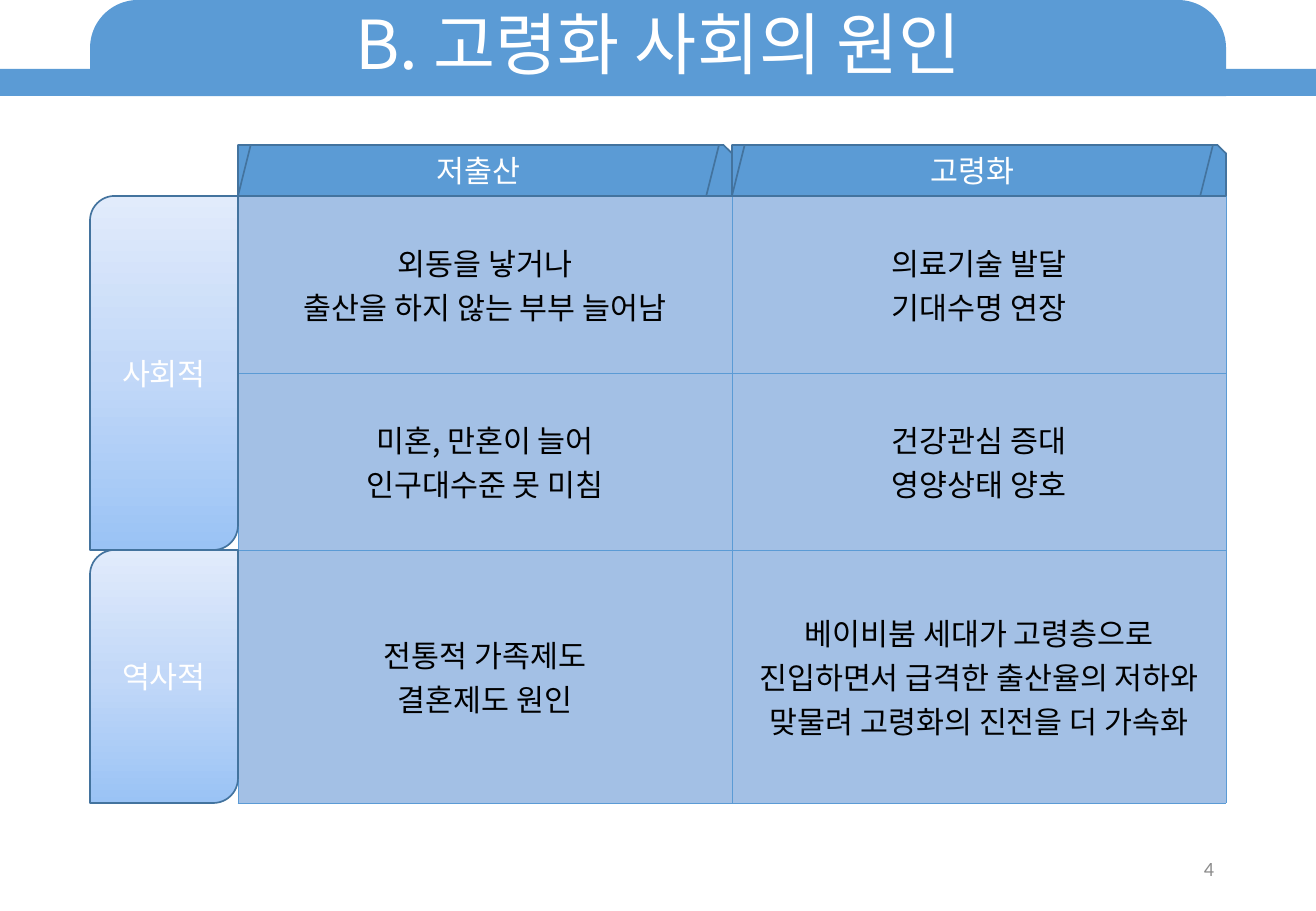
from copy import deepcopy
from dataclasses import dataclass

from lxml.etree import SubElement
from pptx import Presentation
from pptx.dml.color import RGBColor
from pptx.enum.shapes import MSO_SHAPE
from pptx.enum.text import MSO_ANCHOR, MSO_AUTO_SIZE, PP_ALIGN
from pptx.oxml.ns import qn
from pptx.util import Pt

EMU_PER_PX = 7526


@dataclass(frozen=True)
class Theme:
    blue: str = "5B9BD5"
    outline: str = "43739E"
    cell: str = "A3C0E5"
    white: str = "FFFFFF"
    black: str = "000000"
    grey: str = "8C8C8C"
    label_gradient: tuple = ("9AC3F5", "C2D8F8", "E1EBFB")
    latin: str = "Calibri"
    korean: str = "Noto Sans CJK KR"
    title_size: int = 40
    body_size: int = 18
    number_size: int = 12


THEME = Theme()


def px(*lengths):
    return [length * EMU_PER_PX for length in lengths]


def color(value):
    return RGBColor.from_string(value)


def write(frame, text, size, ink, latin, align=PP_ALIGN.CENTER):
    frame.word_wrap = True
    frame.text = text
    for para in frame.paragraphs:
        para.alignment = align
        para.font.size = Pt(size)
        para.font.name = latin
        para.font.color.rgb = color(ink)
        SubElement(para.font._element, qn("a:ea"), typeface=THEME.korean)


def add_block(page, kind, box, fill=THEME.blue, outlined=True):
    block = page.shapes.add_shape(kind, *px(*box))
    block.shadow.inherit = False
    block.fill.solid()
    block.fill.fore_color.rgb = color(fill)
    if outlined:
        block.line.color.rgb = color(THEME.outline)
        block.line.width = Pt(1)
    else:
        block.line.fill.background()
    return block


def label_block(block, text):
    block.text_frame.vertical_anchor = MSO_ANCHOR.MIDDLE
    write(block.text_frame, text, THEME.body_size, THEME.white, THEME.latin)


def shade_label(block):
    block.fill.gradient()
    block.fill.gradient_angle = 90
    stops = block._element.spPr.find(qn("a:gradFill")).find(qn("a:gsLst"))
    stops.insert(1, deepcopy(stops[0]))
    for index, stop in enumerate(block.fill.gradient_stops):
        stop.position = index / 2
        stop.color.rgb = color(THEME.label_gradient[index])


def add_banner(page, box, page_width, text):
    left, top, width, height = box
    add_block(page, MSO_SHAPE.RECTANGLE, (0, top + 69, page_width, height - 69), outlined=False)
    banner = add_block(page, MSO_SHAPE.ROUND_2_SAME_RECTANGLE, box, outlined=False)
    banner.adjustments[0] = 0.5
    title = page.shapes.title
    title.left, title.top, title.width, title.height = px(*box)
    frame = title.text_frame
    frame.auto_size = MSO_AUTO_SIZE.NONE
    frame.vertical_anchor = MSO_ANCHOR.MIDDLE
    write(frame, text, THEME.title_size, THEME.white, THEME.korean)
    frame.paragraphs[0].line_spacing = 0.9
    page.shapes._spTree.append(title._element)


def add_borders(cell):
    properties = cell._tc.get_or_add_tcPr()
    for side in ("lnL", "lnR", "lnT", "lnB"):
        line = SubElement(properties, qn(f"a:{side}"), w=str(Pt(0.5)))
        fill = SubElement(line, qn("a:solidFill"))
        SubElement(fill, qn("a:srgbClr"), val=THEME.blue)


def add_causes(page, box, row_heights, causes):
    column_count = len(causes[0])
    table = page.shapes.add_table(len(causes), column_count, *px(*box)).table
    table.first_row = table.horz_banding = False
    for column in table.columns:
        column.width = px(box[2] // column_count)[0]
    for row, height, texts in zip(table.rows, row_heights, causes):
        row.height = px(height)[0]
        for cell, text in zip(row.cells, texts):
            add_borders(cell)
            cell.fill.solid()
            cell.fill.fore_color.rgb = color(THEME.cell)
            cell.vertical_anchor = MSO_ANCHOR.MIDDLE
            write(cell.text_frame, text, THEME.body_size, THEME.black, THEME.korean)


def add_headers(page, box, headers):
    left, top, width, height = box
    step = width // len(headers)
    for index in range(len(headers)):
        add_block(page, MSO_SHAPE.SNIP_1_RECTANGLE, (left + index * step, top, step, height))
    for index, text in enumerate(headers):
        tab = (left + index * step, top, step - 13, height)
        label_block(add_block(page, MSO_SHAPE.PARALLELOGRAM, tab), text)


def add_side_labels(page, box, labels):
    left, top, width, height = box
    for text, label_height in labels:
        area = (left, top, width, label_height)
        block = add_block(page, MSO_SHAPE.ROUND_2_DIAG_RECTANGLE, area)
        shade_label(block)
        label_block(block, text)
        top += label_height


def add_page_number(page, box, text):
    frame = page.shapes.add_textbox(*px(*box)).text_frame
    frame.vertical_anchor = MSO_ANCHOR.MIDDLE
    write(frame, text, THEME.number_size, THEME.grey, THEME.latin, PP_ALIGN.RIGHT)


def add_matrix(page, box, headers, labels, row_heights, causes):
    left, top, width, height = box
    label_width, header_height = 148, 51
    grid_left, grid_top = left + label_width, top + header_height
    grid_width, grid_height = width - label_width, height - header_height
    add_causes(page, (grid_left, grid_top, grid_width, grid_height), row_heights, causes)
    add_headers(page, (grid_left, top, grid_width, header_height), headers)
    add_side_labels(page, (left, grid_top, label_width, grid_height), labels)


def main():
    deck = Presentation()
    page_width, page_height = 1316, 911
    deck.slide_width, deck.slide_height = px(page_width, page_height)
    page = deck.slides.add_slide(deck.slide_layouts.get_by_name("Title Only"))
    add_banner(page, (90, 0, 1136, 96), page_width, "B. 고령화 사회의 원인")
    social, historical = 177, 253
    add_matrix(
        page,
        (90, 145, 1136, 658),
        ("저출산", "고령화"),
        (("사회적", 2 * social), ("역사적", historical)),
        (social, social, historical),
        (
            ("외동을 낳거나\n출산을 하지 않는 부부 늘어남", "의료기술 발달\n기대수명 연장"),
            ("미혼, 만혼이 늘어\n인구대수준 못 미침", "건강관심 증대\n영양상태 양호"),
            (
                "전통적 가족제도\n결혼제도 원인",
                "베이비붐 세대가 고령층으로 진입하면서 급격한 출산율의 저하와\n"
                "맞물려 고령화의 진전을 더 가속화",
            ),
        ),
    )
    add_page_number(page, (929, 844, 297, 49), "4")
    deck.save("out.pptx")


if __name__ == "__main__":
    main()
